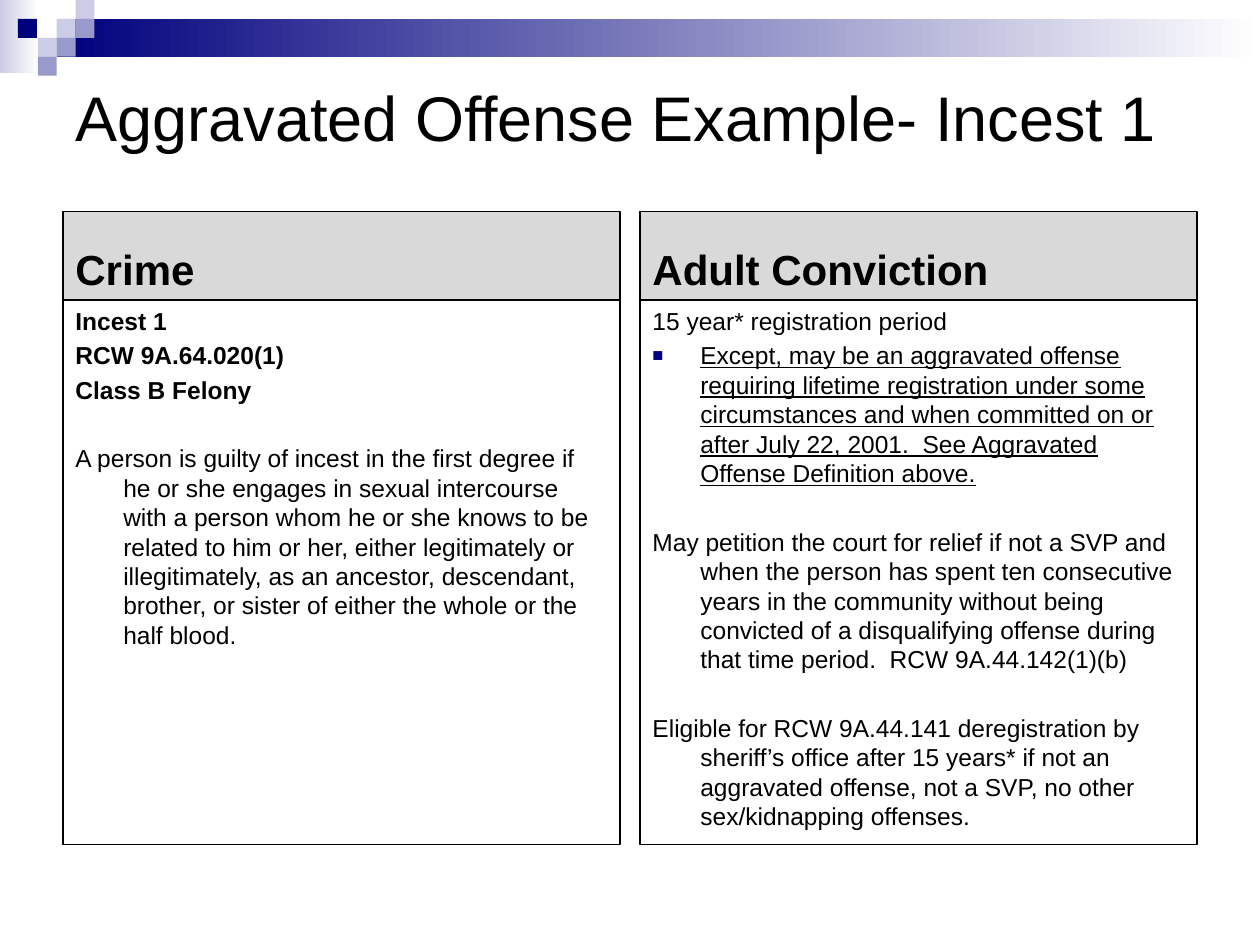
from lxml import etree
from pptx import Presentation
from pptx.dml.color import RGBColor
from pptx.enum.shapes import MSO_SHAPE
from pptx.enum.text import MSO_ANCHOR, PP_ALIGN
from pptx.oxml.ns import qn
from pptx.util import Inches, Pt

RECT = MSO_SHAPE.RECTANGLE
TOP, MIDDLE, BOTTOM = MSO_ANCHOR.TOP, MSO_ANCHOR.MIDDLE, MSO_ANCHOR.BOTTOM
LEFT = PP_ALIGN.LEFT
TITLE_ONLY = 5

COLORS = {"navy": "00007D", "mid": "9999CC", "pale": "CCCCE6",
          "grey": "D9D9D9", "black": "000000", "white": "FFFFFF"}
FONT = "Arial"
BOLD = {"bold": True}
UNDERLINE = {"underline": True}
HEAD_H = 0.7
INDENT = 0.38
SPACE = 2.8   # points before an ordinary paragraph
GAP = 22.4    # points before a paragraph that opens a new block

# Each paragraph: text, font format, space before, bullet
CRIME = [
    ("Incest 1", BOLD, SPACE, False),
    ("RCW 9A.64.020(1)", BOLD, SPACE, False),
    ("Class B Felony", BOLD, SPACE, False),
    ("A person is guilty of incest in the first degree if he or she engages in "
     "sexual intercourse with a person whom he or she knows to be related to him "
     "or her, either legitimately or illegitimately, as an ancestor, descendant, "
     "brother, or sister of either the whole or the half blood.", {}, GAP, False),
]
CONVICTION = [
    ("15 year* registration period", {}, SPACE, False),
    ("Except, may be an aggravated offense requiring lifetime registration under "
     "some circumstances and when committed on or after July 22, 2001.  See "
     "Aggravated Offense Definition above.", UNDERLINE, SPACE, True),
    ("May petition the court for relief if not a SVP and when the person has spent "
     "ten consecutive years in the community without being convicted of a "
     "disqualifying offense during that time period.  RCW 9A.44.142(1)(b)",
     {}, GAP, False),
    ("Eligible for RCW 9A.44.141 deregistration by sheriff’s office after 15 years* "
     "if not an aggravated offense, not a SVP, no other sex/kidnapping offenses.",
     {}, GAP, False),
]


def rgb(name):
    return RGBColor.from_string(COLORS[name])


def add_rect(slide, x, y, w, h, fill=None, line=None):
    sp = slide.shapes.add_shape(RECT, Inches(x), Inches(y), Inches(w), Inches(h))
    sp.shadow.inherit = False
    if fill:
        sp.fill.solid()
        sp.fill.fore_color.rgb = rgb(fill)
    else:
        sp.fill.background()
    if line:
        sp.line.color.rgb = rgb(line)
        sp.line.width = Pt(0.75)
    else:
        sp.line.fill.background()
    return sp


def add_fade(slide, x, y, w, h, start):
    """Rectangle fading from the start colour to white, left to right."""
    sp = add_rect(slide, x, y, w, h)
    sp.fill.gradient()
    sp.fill.gradient_angle = 0
    for stop, name in zip(sp.fill.gradient_stops, (start, "white")):
        stop.color.rgb = rgb(name)


def add_text(p, text, size, **fmt):
    p.alignment = LEFT
    r = p.add_run()
    r.text = text
    r.font.color.rgb = rgb("black")
    for name, value in {"name": FONT, "size": Pt(size), **fmt}.items():
        setattr(r.font, name, value)


def set_indent(p, bullet):
    """Hanging indent, with a small navy square if bullet is set."""
    pPr = p._p.get_or_add_pPr()
    pPr.set("marL", str(Inches(INDENT)))
    pPr.set("indent", str(-Inches(INDENT)))
    if not bullet:
        etree.SubElement(pPr, qn("a:buNone"))
        return
    color = etree.SubElement(pPr, qn("a:buClr"))
    etree.SubElement(color, qn("a:srgbClr"), val=COLORS["navy"])
    etree.SubElement(pPr, qn("a:buSzPct"), val="75000")
    etree.SubElement(pPr, qn("a:buFont"), typeface=FONT)
    etree.SubElement(pPr, qn("a:buChar"), char="■")


def add_banner(slide, x, y, w):
    """Fading band with a checker of small squares at its left end."""
    cell = 0.15
    add_fade(slide, x, y, 0.31, 0.58, "pale")
    add_fade(slide, x + 3 * cell, y + cell, w - 3 * cell, 2 * cell, "navy")
    squares = [(3, 1, "pale"), (4, 0, "pale"), (4, 1, "mid"), (2, 2, "pale"),
               (0.95, 1, "navy"), (3, 2, "mid"), (2, 3, "mid")]
    for col, row, fill in squares:
        add_rect(slide, x + col * cell, y + row * cell, cell, cell, fill)


def set_title(slide, x, y, w, h, text):
    sp = slide.shapes.title
    sp.left, sp.top, sp.width, sp.height = map(Inches, (x, y, w, h))
    tf = sp.text_frame
    tf.vertical_anchor = MIDDLE
    add_text(tf.paragraphs[0], text, 36)


def add_column(slide, x, y, w, h, heading, paragraphs):
    """Grey heading box on top of an outlined body box."""
    head = add_rect(slide, x, y, w, HEAD_H, "grey", "black").text_frame
    head.word_wrap = True
    head.vertical_anchor = BOTTOM
    add_text(head.paragraphs[0], heading, 24, bold=True)

    body = add_rect(slide, x, y + HEAD_H, w, h - HEAD_H, line="black").text_frame
    body.word_wrap = True
    body.vertical_anchor = TOP
    for i, (text, fmt, space, bullet) in enumerate(paragraphs):
        p = body.add_paragraph() if i else body.paragraphs[0]
        p.space_before = Pt(space)
        set_indent(p, bullet)
        add_text(p, text, 14, **fmt)


def main():
    prs = Presentation()
    prs.slide_width, prs.slide_height = Inches(10), Inches(7.5)
    slide = prs.slides.add_slide(prs.slide_layouts[TITLE_ONLY])
    add_banner(slide, 0, 0, 10)
    set_title(slide, 0.5, 0.3, 9, 1.25, "Aggravated Offense Example- Incest 1")
    columns = [("Crime", CRIME), ("Adult Conviction", CONVICTION)]
    for i, (heading, paragraphs) in enumerate(columns):
        add_column(slide, 0.5 + i * 4.58, 1.68, 4.42, 5.02, heading, paragraphs)
    prs.save("out.pptx")


if __name__ == "__main__":
    main()
